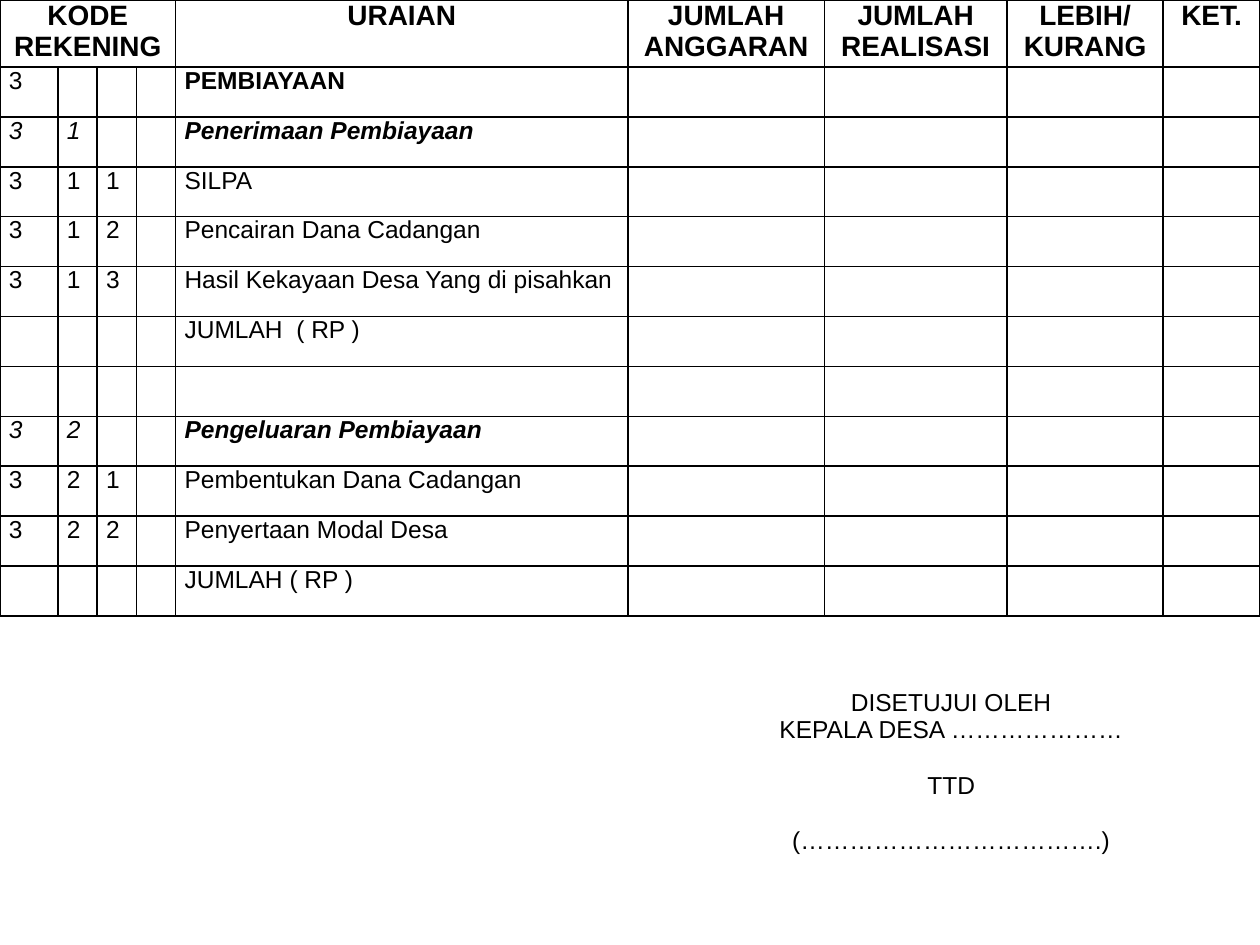
from lxml import etree
from pptx import Presentation
from pptx.dml.color import RGBColor
from pptx.enum.text import PP_ALIGN
from pptx.oxml.ns import qn
from pptx.util import Cm, Pt

LEFT, CENTER = PP_ALIGN.LEFT, PP_ALIGN.CENTER
COLORS = {"ink": "000000"}
FONT = "Arial"

COLUMN_WIDTHS = [1.17, 0.79, 0.79, 0.79, 9.12, 3.96, 3.68, 3.15, 1.95]
HEADER_HEIGHT = 1.35
CODE_COLUMNS = 4
HEADERS = ["KODE REKENING", "URAIAN", "JUMLAH\nANGGARAN", "JUMLAH REALISASI",
           "LEBIH/\nKURANG", "KET."]

# Account code (one digit per column), description, style
ACCOUNTS = [
    ("3", "PEMBIAYAAN", "group"),
    ("31", "Penerimaan Pembiayaan", "subgroup"),
    ("311", "SILPA", "item"),
    ("312", "Pencairan Dana Cadangan", "item"),
    ("313", "Hasil Kekayaan Desa Yang di pisahkan", "item"),
    ("", "JUMLAH  ( RP )", "item"),
    ("", "", "item"),
    ("32", "Pengeluaran Pembiayaan", "subgroup"),
    ("321", "Pembentukan Dana Cadangan", "item"),
    ("322", "Penyertaan Modal Desa", "item"),
    ("", "JUMLAH ( RP )", "item"),
]

# Line of the signature, points of space before it
SIGNATURE_LINES = [
    ("DISETUJUI OLEH", 0),
    ("KEPALA DESA …………………", 0),
    ("TTD", 16),
    ("(……………………………….)", 16),
]


def write_cell(cell, text, size=14, bold=False, italic=False, align=LEFT, inset=0.18):
    cell.margin_left = cell.margin_right = Cm(inset)
    cell.margin_top = cell.margin_bottom = 0
    cell.text_frame.text = text
    for paragraph in cell.text_frame.paragraphs:
        paragraph.alignment = align
        font = paragraph.font
        font.name, font.size = FONT, Pt(size)
        font.bold, font.italic = bold, italic
        font.color.rgb = RGBColor.from_string(COLORS["ink"])


def add_borders(cell):
    properties = cell._tc.get_or_add_tcPr()
    for side in ("a:lnL", "a:lnR", "a:lnT", "a:lnB"):
        line = etree.SubElement(properties, qn(side), w=str(Pt(1)))
        fill = etree.SubElement(line, qn("a:solidFill"))
        etree.SubElement(fill, qn("a:srgbClr"), val=COLORS["ink"])


def add_plain_table(slide, rows, columns, left, top, width, height):
    """Add a table without the heading and banding of the default style."""
    table = slide.shapes.add_table(
        rows, columns, Cm(left), Cm(top), Cm(width), Cm(height)).table
    table.first_row = table.horz_banding = False
    return table


def add_budget_table(slide, left, top, width, height):
    table = add_plain_table(slide, len(ACCOUNTS) + 1, len(COLUMN_WIDTHS),
                            left, top, width, height)
    scale = width / sum(COLUMN_WIDTHS)
    for column, column_width in zip(table.columns, COLUMN_WIDTHS):
        column.width = Cm(column_width * scale)
    row_height = (height - HEADER_HEIGHT) / len(ACCOUNTS)
    for index, row in enumerate(table.rows):
        row.height = Cm(row_height if index else HEADER_HEIGHT)

    for cell in table.iter_cells():
        add_borders(cell)
        cell.fill.background()

    table.cell(0, 0).merge(table.cell(0, CODE_COLUMNS - 1))
    header_columns = [0, *range(CODE_COLUMNS, len(COLUMN_WIDTHS))]
    for column, text in zip(header_columns, HEADERS):
        write_cell(table.cell(0, column), text, size=16, bold=True,
                   align=CENTER, inset=0.1)

    for row, (code, description, style) in enumerate(ACCOUNTS, start=1):
        texts = [*code.ljust(CODE_COLUMNS), description]
        texts += [""] * (len(COLUMN_WIDTHS) - len(texts))
        for column, text in enumerate(texts):
            write_cell(table.cell(row, column), text.strip(),
                       bold=column == CODE_COLUMNS and style != "item",
                       italic=style == "subgroup")


def add_signature(slide, left, top, width, height):
    cell = add_plain_table(slide, 1, 1, left, top, width, height).cell(0, 0)
    cell.fill.background()
    write_cell(cell, "\n".join(text for text, _ in SIGNATURE_LINES), align=CENTER)
    for paragraph, (_, space) in zip(cell.text_frame.paragraphs, SIGNATURE_LINES):
        paragraph.space_before = Pt(space)


def main():
    presentation = Presentation()
    presentation.slide_width, presentation.slide_height = Cm(25.4), Cm(19.05)
    slide = presentation.slides.add_slide(presentation.slide_layouts[6])
    add_budget_table(slide, 0, 0, 25.4, 12.42)
    add_signature(slide, 15.29, 13.89, 7.77, 4.17)
    presentation.save("out.pptx")


if __name__ == "__main__":
    main()
